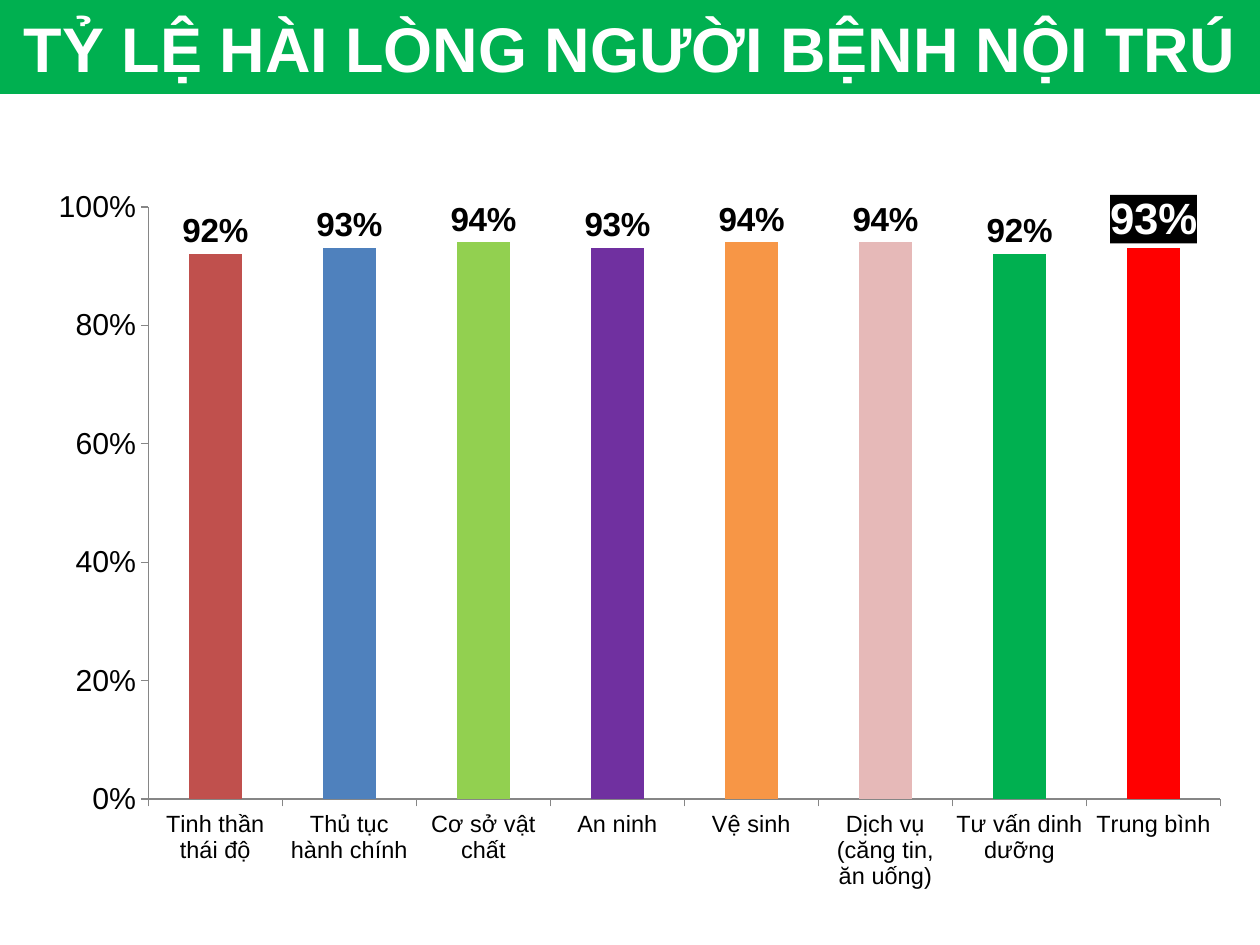
"""Build a slide charting inpatient satisfaction rates."""
from lxml.etree import SubElement
from pptx import Presentation
from pptx.chart.data import CategoryChartData
from pptx.dml.color import RGBColor
from pptx.enum.chart import XL_CHART_TYPE, XL_LABEL_POSITION, XL_TICK_MARK
from pptx.enum.shapes import MSO_SHAPE
from pptx.enum.text import MSO_ANCHOR, PP_ALIGN
from pptx.oxml import parse_xml
from pptx.oxml.ns import nsdecls, qn
from pptx.util import Emu, Pt


def px(n):
    return Emu(round(n * 914400 / 126))


def style(font, size, color, bold=False):
    font.name = "Arial"
    font.size = Pt(size)
    font.bold = bold
    font.color.rgb = RGBColor.from_string(color)


rates = [
    ("Tinh thần thái độ", 0.92, "C0504D"),
    ("Thủ tục hành chính", 0.93, "4F81BD"),
    ("Cơ sở vật chất", 0.94, "92D050"),
    ("An ninh", 0.93, "7030A0"),
    ("Vệ sinh", 0.94, "F79646"),
    ("Dịch vụ (căng tin, ăn uống)", 0.94, "E6B9B8"),
    ("Tư vấn dinh dưỡng", 0.92, "00B050"),
    ("Trung bình", 0.93, "FF0000"),
]

prs = Presentation()
prs.slide_width, prs.slide_height = px(1260), px(945)
slide = prs.slides.add_slide(prs.slide_layouts[6])

title = slide.shapes.add_shape(MSO_SHAPE.RECTANGLE, 0, 0, px(1260), px(94))
title.shadow.inherit = False
title.fill.solid()
title.fill.fore_color.rgb = RGBColor.from_string("00B050")
title.line.fill.background()
frame = title.text_frame
frame.vertical_anchor = MSO_ANCHOR.MIDDLE
frame.word_wrap = False
para = frame.paragraphs[0]
para.text = "TỶ LỆ HÀI LÒNG NGƯỜI BỆNH NỘI TRÚ"
para.alignment = PP_ALIGN.CENTER
style(para.font, 36, "FFFFFF", True)

data = CategoryChartData(number_format="0%")
data.categories = [name for name, rate, color in rates]
data.add_series("Series 1", [rate for name, rate, color in rates])
chart = slide.shapes.add_chart(
    XL_CHART_TYPE.COLUMN_CLUSTERED, px(8), px(155), px(1231), px(743), data
).chart
chart.has_title = False
chart.has_legend = False
chart.font.name = "Calibri"
chart.font.size = Pt(17.3)

for axis, size in ((chart.category_axis, 13.4), (chart.value_axis, 17.3)):
    style(axis.tick_labels.font, size, "000000")
    axis.has_major_gridlines = False
    axis.major_tick_mark = XL_TICK_MARK.OUTSIDE
    axis.format.line.color.rgb = RGBColor.from_string("868686")
    axis.format.line.width = Pt(0.75)
scale = chart.value_axis
scale.minimum_scale, scale.maximum_scale, scale.major_unit = 0, 1, 0.2
scale.tick_labels.number_format = "0%"
scale.tick_labels.number_format_is_linked = False

plot = chart.plots[0]
plot.gap_width = 150
plot.vary_by_categories = False
bars = plot.series[0]
for i, (name, rate, color) in enumerate(rates):
    fill = bars.points[i].format.fill
    fill.solid()
    fill.fore_color.rgb = RGBColor.from_string(color)

labels = bars.data_labels
labels.show_value = True
labels.number_format = "0%"
labels.number_format_is_linked = False
labels.position = XL_LABEL_POSITION.OUTSIDE_END
style(labels.font, 19, "000000", True)

mean = bars.points[len(rates) - 1].data_label
style(mean.font, 25, "FFFFFF", True)
mean.position = XL_LABEL_POSITION.OUTSIDE_END
space = chart.element if hasattr(chart, "element") else chart._chartSpace
text = space.xpath(".//c:dLbl/c:txPr")[0]
for old in space.xpath(".//c:dLbl/c:spPr"):
    old.getparent().remove(old)
text.addprevious(parse_xml(
    f'<c:spPr {nsdecls("c", "a")}><a:solidFill><a:srgbClr val="000000"/></a:solidFill></c:spPr>'
))

area = space.xpath(".//c:plotArea")[0]
for old in area.findall(qn("c:layout")):
    area.remove(old)
layout = parse_xml(f'<c:layout {nsdecls("c")}><c:manualLayout/></c:layout>')
for tag, val in (
    ("layoutTarget", "inner"), ("xMode", "edge"), ("yMode", "edge"),
    ("x", "0.114"), ("y", "0.07"), ("w", "0.871"), ("h", "0.797"),
):
    SubElement(layout[0], qn(f"c:{tag}")).set("val", val)
area.insert(0, layout)

prs.save("out.pptx")
